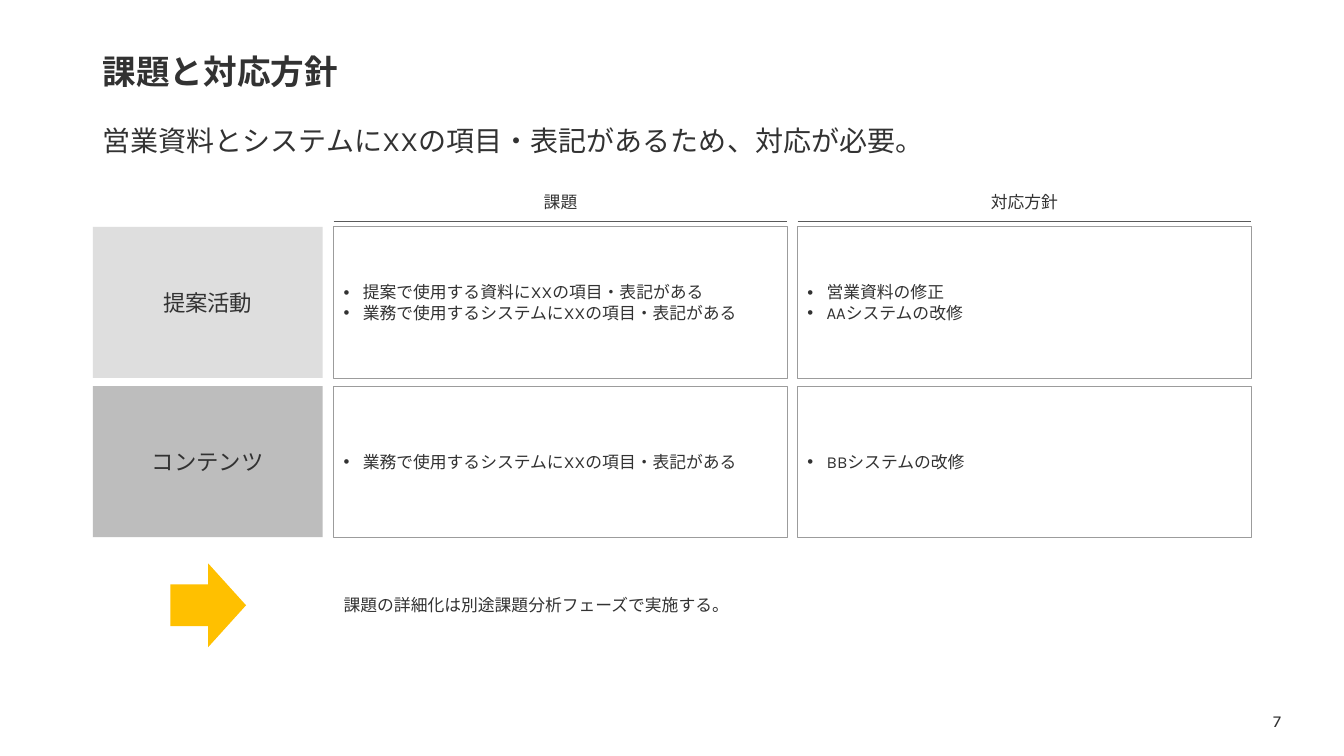
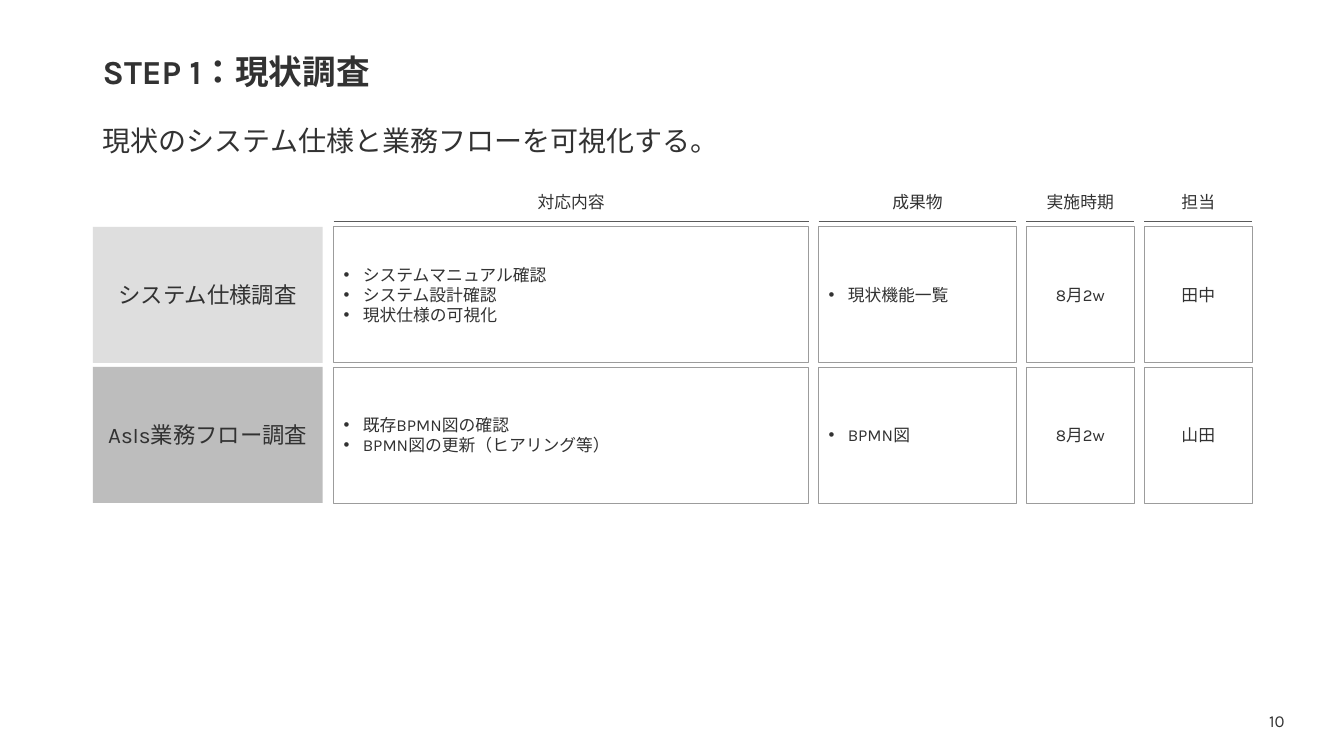
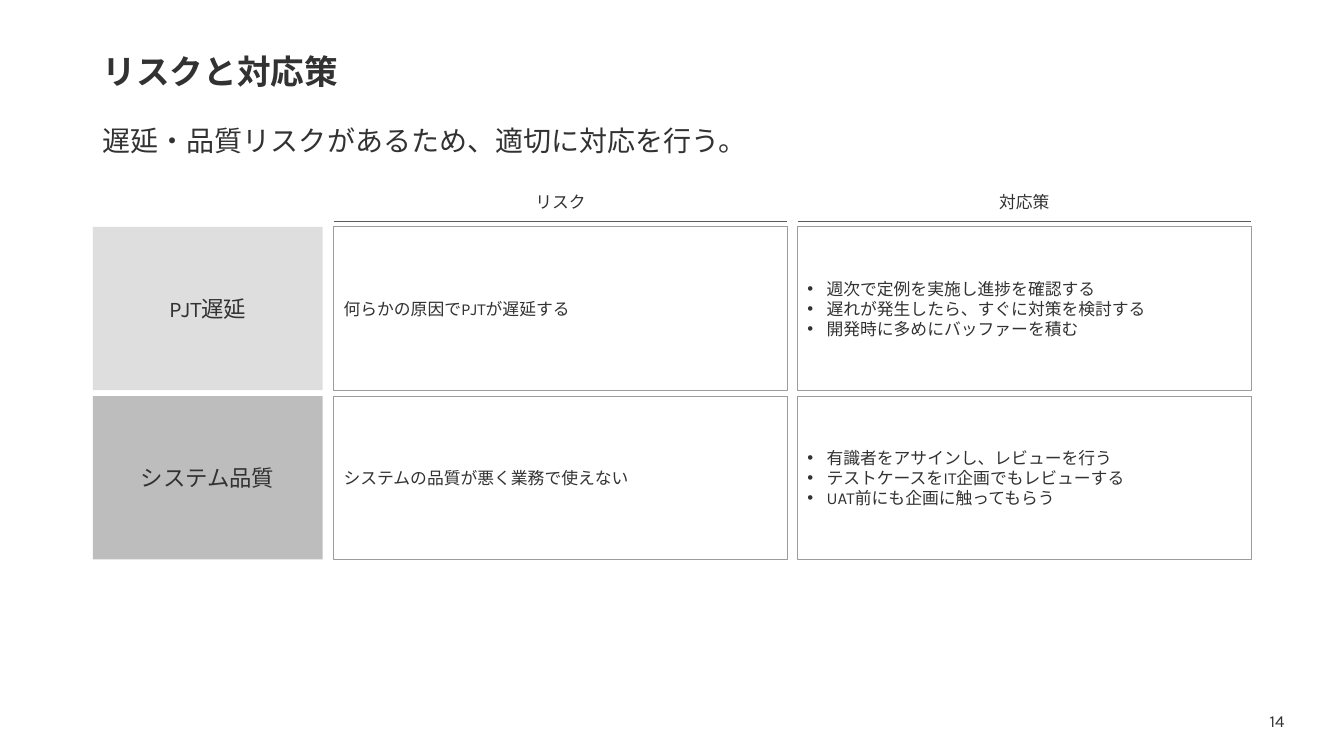
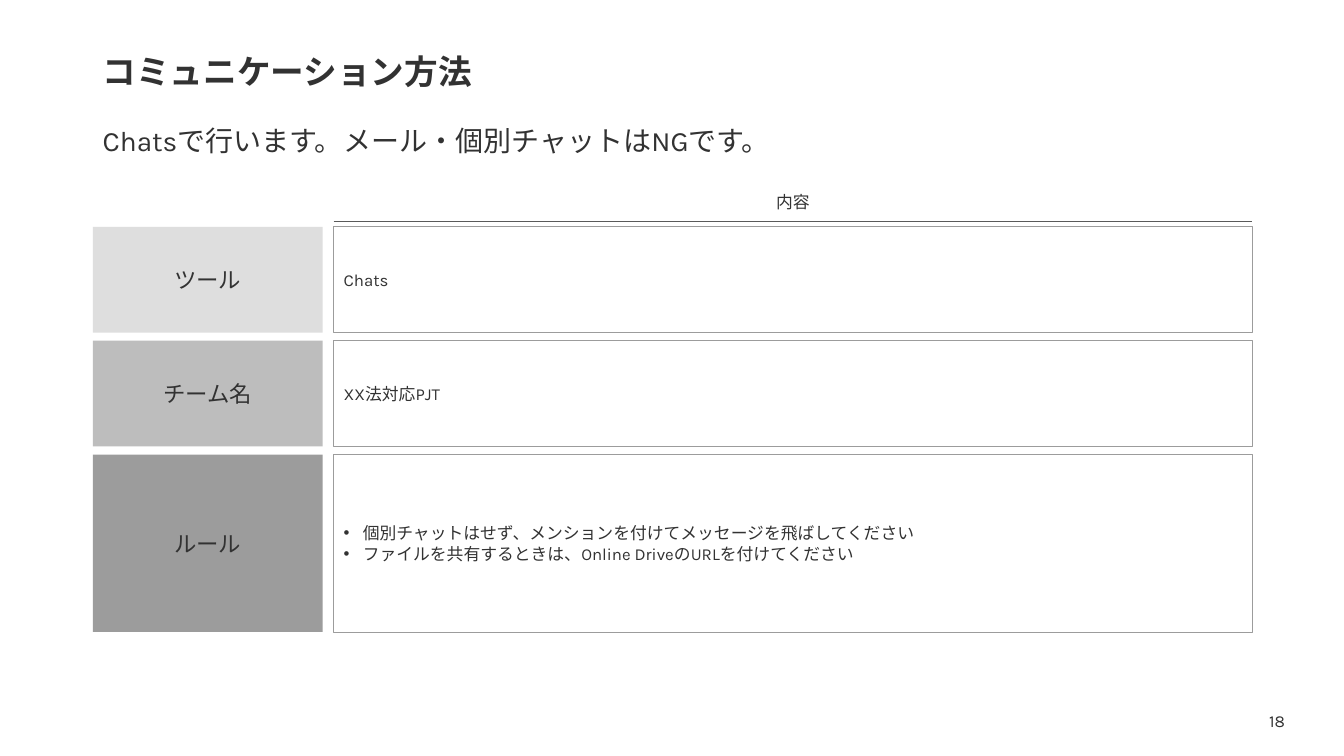
"""Build four project-plan slides that share one labelled grid layout."""
from dataclasses import dataclass
from enum import Enum

from lxml import etree
from pptx import Presentation
from pptx.dml.color import RGBColor
from pptx.enum.lang import MSO_LANGUAGE_ID
from pptx.enum.shapes import MSO_CONNECTOR, MSO_SHAPE
from pptx.enum.text import MSO_ANCHOR, PP_ALIGN
from pptx.oxml.ns import qn
from pptx.util import Inches, Pt

RECT, ARROW = MSO_SHAPE.RECTANGLE, MSO_SHAPE.RIGHT_ARROW
STRAIGHT = MSO_CONNECTOR.STRAIGHT
LEFT, CENTER = PP_ALIGN.LEFT, PP_ALIGN.CENTER
MIDDLE = MSO_ANCHOR.MIDDLE
JAPANESE = MSO_LANGUAGE_ID.JAPANESE

FONT = "Karla"
COLORS = {
    "text": "323232",
    "rule": "5A5A5A",
    "border": "9C9C9C",
    "arrow": "FFC000",
    "row1": "DEDEDE",
    "row2": "BDBDBD",
    "row3": "9C9C9C",
}
MARGIN, CONTENT_W = 0.92, 11.5
LABEL_W = 2.28
GRID_LEFT, GRID_TOP, GRID_W = 3.31, 2.25, 9.11
COL_GAP = 0.1
HEAD_TOP, HEAD_H, RULE_Y = 1.85, 0.3, 2.2
BULLET_INDENT = 0.19


class Style(Enum):
    """How the cells of a column set their text."""
    BULLET = "bullet"
    PLAIN = "plain"
    CENTER = "center"


@dataclass(frozen=True)
class Box:
    """A rectangle in inches."""
    left: float
    top: float
    width: float
    height: float

    def emu(self) -> list:
        """Return the four lengths for python-pptx."""
        return [Inches(v) for v in (self.left, self.top, self.width, self.height)]


@dataclass(frozen=True)
class Cell:
    """The lines of one grid cell."""
    lines: tuple[str, ...]
    style: Style = Style.BULLET


@dataclass(frozen=True)
class Row:
    """A labelled row of the grid."""
    label: str
    height: float
    cells: tuple[Cell, ...]


@dataclass(frozen=True)
class Column:
    """A column heading and its width."""
    head: str
    width: float


@dataclass(frozen=True)
class Page:
    """The content of one slide."""
    number: int
    title: str
    message: str
    columns: tuple[Column, ...]
    rows: tuple[Row, ...]
    row_gap: float
    note: str = ""


def bullets(*lines: str) -> Cell:
    """Return a bulleted cell."""
    return Cell(lines)


def plain(line: str) -> Cell:
    """Return a left-aligned cell without a bullet."""
    return Cell((line,), Style.PLAIN)


def centered(line: str) -> Cell:
    """Return a centred cell."""
    return Cell((line,), Style.CENTER)


PAGES = (
    Page(
        7, "課題と対応方針",
        "営業資料とシステムにXXの項目・表記があるため、対応が必要。",
        (Column("課題", 4.5), Column("対応方針", 4.5)),
        (
            Row("提案活動", 1.5, (
                bullets("提案で使用する資料にXXの項目・表記がある",
                        "業務で使用するシステムにXXの項目・表記がある"),
                bullets("営業資料の修正", "AAシステムの改修"))),
            Row("コンテンツ", 1.5, (
                bullets("業務で使用するシステムにXXの項目・表記がある"),
                bullets("BBシステムの改修"))),
        ),
        0.08, "課題の詳細化は別途課題分析フェーズで実施する。",
    ),
    Page(
        10, "STEP 1：現状調査",
        "現状のシステム仕様と業務フローを可視化する。",
        (Column("対応内容", 4.71), Column("成果物", 1.96),
         Column("実施時期", 1.07), Column("担当", 1.07)),
        (
            Row("システム仕様調査", 1.35, (
                bullets("システムマニュアル確認", "システム設計確認", "現状仕様の可視化"),
                bullets("現状機能一覧"), centered("8月2w"), centered("田中"))),
            Row("AsIs業務フロー調査", 1.35, (
                bullets("既存BPMN図の確認", "BPMN図の更新（ヒアリング等）"),
                bullets("BPMN図"), centered("8月2w"), centered("山田"))),
        ),
        0.04,
    ),
    Page(
        14, "リスクと対応策",
        "遅延・品質リスクがあるため、適切に対応を行う。",
        (Column("リスク", 4.5), Column("対応策", 4.5)),
        (
            Row("PJT遅延", 1.62, (
                plain("何らかの原因でPJTが遅延する"),
                bullets("週次で定例を実施し進捗を確認する",
                        "遅れが発生したら、すぐに対策を検討する",
                        "開発時に多めにバッファーを積む"))),
            Row("システム品質", 1.62, (
                plain("システムの品質が悪く業務で使えない"),
                bullets("有識者をアサインし、レビューを行う",
                        "テストケースをIT企画でもレビューする",
                        "UAT前にも企画に触ってもらう"))),
        ),
        0.06,
    ),
    Page(
        18, "コミュニケーション方法",
        "Chatsで行います。メール・個別チャットはNGです。",
        (Column("内容", GRID_W),),
        (
            Row("ツール", 1.05, (plain("Chats"),)),
            Row("チーム名", 1.05, (plain("XX法対応PJT"),)),
            Row("ルール", 1.76, (
                bullets("個別チャットはせず、メンションを付けてメッセージを飛ばしてください",
                        "ファイルを共有するときは、Online DriveのURLを付けてください"),)),
        ),
        0.08,
    ),
)


def rgb(name: str) -> RGBColor:
    """Look up a named colour."""
    return RGBColor.from_string(COLORS[name])


def add_bullet(p) -> None:
    """Give a paragraph a hanging round bullet."""
    pPr = p._p.get_or_add_pPr()
    pPr.set("marL", str(Inches(BULLET_INDENT)))
    pPr.set("indent", str(-Inches(BULLET_INDENT)))
    etree.SubElement(pPr, qn("a:buFont")).set("typeface", "Arial")
    etree.SubElement(pPr, qn("a:buChar")).set("char", "•")


def write(sp, lines: tuple[str, ...], size: int = 12, style: Style = Style.PLAIN,
          bold: bool = False) -> None:
    """Fill a shape with vertically centred paragraphs."""
    tf = sp.text_frame
    tf.word_wrap = True
    tf.vertical_anchor = MIDDLE
    tf.text = "\n".join(lines)
    for p in tf.paragraphs:
        p.alignment = CENTER if style is Style.CENTER else LEFT
        if style is Style.BULLET:
            add_bullet(p)
        for r in p.runs:
            r.font.size = Pt(size)
            r.font.bold = bold
            r.font.name = FONT
            r.font.color.rgb = rgb("text")
            r.font.language_id = JAPANESE
            etree.SubElement(r._r.get_or_add_rPr(), qn("a:ea")).set("typeface", FONT)


def add_text(s, box: Box, text: str, size: int = 12, style: Style = Style.PLAIN,
             bold: bool = False):
    """Add a one-line text box."""
    sp = s.shapes.add_textbox(*box.emu())
    write(sp, (text,), size, style, bold)
    return sp


def add_block(s, box: Box, fill: str = "", border: str = "", kind=RECT):
    """Add a flat shape with an optional fill and border."""
    sp = s.shapes.add_shape(kind, *box.emu())
    sp.shadow.inherit = False
    if fill:
        sp.fill.solid()
        sp.fill.fore_color.rgb = rgb(fill)
    else:
        sp.fill.background()
    if border:
        sp.line.color.rgb = rgb(border)
        sp.line.width = Pt(0.5)
    else:
        sp.line.fill.background()
    return sp


def add_heading(s, left: float, column: Column) -> None:
    """Add a column heading with a rule under it."""
    y = Inches(RULE_Y)
    rule = s.shapes.add_connector(STRAIGHT, Inches(left), y, Inches(left + column.width), y)
    rule.line.color.rgb = rgb("rule")
    rule.line.width = Pt(0.5)
    etree.SubElement(rule._element.spPr, qn("a:effectLst"))
    add_text(s, Box(left, HEAD_TOP, column.width, HEAD_H), column.head, style=Style.CENTER)


def add_frame(s, page: Page) -> None:
    """Add the title, key message and page number."""
    title = add_text(s, Box(MARGIN, 0.4, CONTENT_W, 0.67), page.title, 24, bold=True)
    message = add_text(s, Box(MARGIN, 1.08, CONTENT_W, 0.67), page.message, 20)
    for sp in (title, message):
        sp.text_frame.paragraphs[0].line_spacing = 0.9
    message.text_frame.paragraphs[0].space_before = Pt(10)
    add_text(s, Box(12.42, 6.95, 0.49, 0.4), str(page.number), style=Style.CENTER)


def add_grid(s, page: Page) -> None:
    """Add the headings, row labels and cells."""
    lefts = []
    left = GRID_LEFT
    for column in page.columns:
        add_heading(s, left, column)
        lefts.append(left)
        left += column.width + COL_GAP
    top = GRID_TOP
    for i, row in enumerate(page.rows, 1):
        label = add_block(s, Box(MARGIN, top, LABEL_W, row.height), fill=f"row{i}")
        write(label, (row.label,), 16, Style.CENTER)
        for x, column, cell in zip(lefts, page.columns, row.cells):
            sp = add_block(s, Box(x, top, column.width, row.height), border="border")
            write(sp, cell.lines, style=cell.style)
        top += row.height + page.row_gap


def add_note(s, text: str) -> None:
    """Add the arrow and the closing remark below the grid."""
    add_block(s, Box(1.69, 5.59, 0.75, 0.83), fill="arrow", kind=ARROW)
    add_text(s, Box(GRID_LEFT, 5.52, GRID_W, 0.97), text)


def main() -> None:
    """Build and save the presentation."""
    prs = Presentation()
    prs.slide_width, prs.slide_height = Inches(13.33), Inches(7.5)
    for page in PAGES:
        s = prs.slides.add_slide(prs.slide_layouts[6])
        add_frame(s, page)
        add_grid(s, page)
        if page.note:
            add_note(s, page.note)
    prs.save("out.pptx")


if __name__ == "__main__":
    main()
